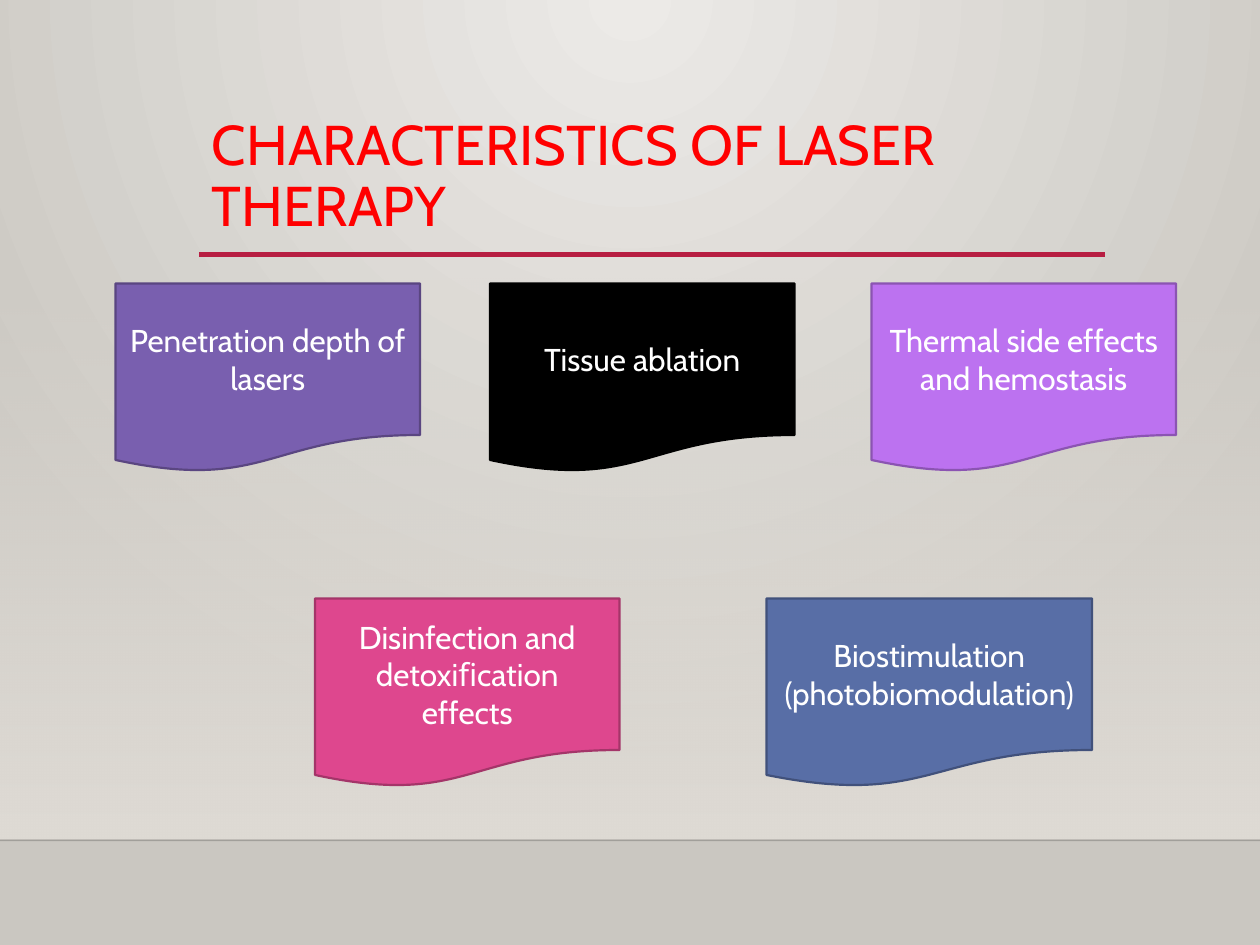
from pptx import Presentation
from pptx.dml.color import RGBColor
from pptx.enum import shapes, text
from pptx.oxml import parse_xml
from pptx.oxml.ns import nsdecls, qn
from pptx.util import Pt

FONT = "Cabin"
RED = RGBColor(0xFF, 0x00, 0x00)
CRIMSON = RGBColor(0xB7, 0x1E, 0x42)
WHITE = RGBColor(0xFF, 0xFF, 0xFF)
BLACK = RGBColor(0x00, 0x00, 0x00)
EDGE = RGBColor(0x00, 0x00, 0x01)
SAND = RGBColor(0xDF, 0xDB, 0xD5)
PALE = RGBColor(0xEC, 0xEA, 0xE7)
GREY = RGBColor(0xCA, 0xC7, 0xC1)
PURPLE, PURPLE_DARK = RGBColor(0x79, 0x5F, 0xAF), RGBColor(0x5A, 0x46, 0x81)
VIOLET, VIOLET_DARK = RGBColor(0xBC, 0x72, 0xF0), RGBColor(0x8B, 0x54, 0xB2)
PINK, PINK_DARK = RGBColor(0xDE, 0x47, 0x8E), RGBColor(0xA4, 0x35, 0x69)
BLUE, BLUE_DARK = RGBColor(0x58, 0x6E, 0xA6), RGBColor(0x41, 0x51, 0x7B)


def write(frame, words, size, color, align, anchor, spacing=None):
    frame.word_wrap = True
    frame.auto_size = text.MSO_AUTO_SIZE.NONE
    frame.vertical_anchor = anchor
    paragraph = frame.paragraphs[0]
    paragraph.alignment = align
    paragraph.line_spacing = spacing
    run = paragraph.add_run()
    run.text = words
    run.font.name, run.font.size = FONT, Pt(size)
    run.font.color.rgb = color


def set_alpha(color_element, percent):
    color_element.append(parse_xml(f'<a:alpha {nsdecls("a")} val="{percent * 1000}"/>'))


def two_stops(fill, first, last):
    fill.gradient()
    for stop, color in zip(fill.gradient_stops, (first, last)):
        stop.color.rgb = color


class Page:
    def __init__(self, slide):
        self.slide = slide

    def background(self, center, rim):
        two_stops(self.slide.background.fill, center, rim)
        linear = next(self.slide.element.iter(qn("a:lin")))
        linear.getparent().replace(linear, parse_xml(
            f'<a:path {nsdecls("a")} path="circle">'
            '<a:fillToRect l="43000" t="0" r="43000" b="100000"/></a:path>'))

    def wall(self, left, top, width, height, color):
        """Rectangle that fades in from clear at the top."""
        wall = self.slide.shapes.add_shape(
            shapes.MSO_SHAPE.RECTANGLE, Pt(left), Pt(top), Pt(width), Pt(height))
        wall.shadow.inherit = False
        wall.line.fill.background()
        two_stops(wall.fill, color, color)
        wall.fill.gradient_angle = 270
        set_alpha(next(wall.element.iter(qn("a:srgbClr"))), 0)

    def rule(self, left, right, y, color, width, alpha=100):
        rule = self.slide.shapes.add_connector(
            shapes.MSO_CONNECTOR.STRAIGHT, Pt(left), Pt(y), Pt(right), Pt(y))
        rule.line.color.rgb, rule.line.width = color, Pt(width)
        if alpha < 100:
            set_alpha(next(rule.element.iter(qn("a:srgbClr"))), alpha)
        rule.element.spPr.append(parse_xml(f'<a:effectLst {nsdecls("a")}/>'))

    def title(self, words, left, top, width, height):
        title = self.slide.shapes.title
        title.left, title.top, title.width, title.height = map(
            Pt, (left, top, width, height))
        write(title.text_frame, words, 32, RED, text.PP_ALIGN.LEFT,
              text.MSO_ANCHOR.TOP, spacing=0.9)

    def card(self, words, left, top, width, fill, line):
        card = self.slide.shapes.add_shape(
            shapes.MSO_SHAPE.FLOWCHART_DOCUMENT, Pt(left), Pt(top), Pt(width), Pt(108))
        card.shadow.inherit = False
        card.fill.solid()
        card.fill.fore_color.rgb = fill
        card.line.color.rgb, card.line.width = line, Pt(1.25)
        write(card.text_frame, words, 18, WHITE, text.PP_ALIGN.CENTER,
              text.MSO_ANCHOR.MIDDLE)


def main():
    deck = Presentation()
    deck.slide_width, deck.slide_height = Pt(720), Pt(540)
    page = Page(deck.slides.add_slide(deck.slide_layouts[5]))

    # Backdrop: wall, floor edge and title rule
    page.background(PALE, GREY)
    page.wall(0, 158.4, 720, 321.4, SAND)
    page.rule(0, 720, 480.2, EDGE, 1, alpha=20)
    page.rule(113.8, 631.2, 145.4, CRIMSON, 2.5)

    page.title("CHARACTERISTICS OF LASER THERAPY", 113.8, 63.4, 517.4, 82.6)

    # Characteristics in two rows
    upper, lower = 162, 342
    normal, wide = 174, 186
    for card in (
        ("Penetration depth of lasers", 66, upper, normal, PURPLE, PURPLE_DARK),
        ("Tissue ablation", 280, upper, normal, BLACK, BLACK),
        ("Thermal side effects and hemostasis", 498, upper, normal, VIOLET, VIOLET_DARK),
        ("Disinfection and detoxiﬁcation effects", 180, lower, normal, PINK, PINK_DARK),
        ("Biostimulation (photobiomodulation)", 438, lower, wide, BLUE, BLUE_DARK),
    ):
        page.card(*card)

    deck.save("out.pptx")


if __name__ == "__main__":
    main()
